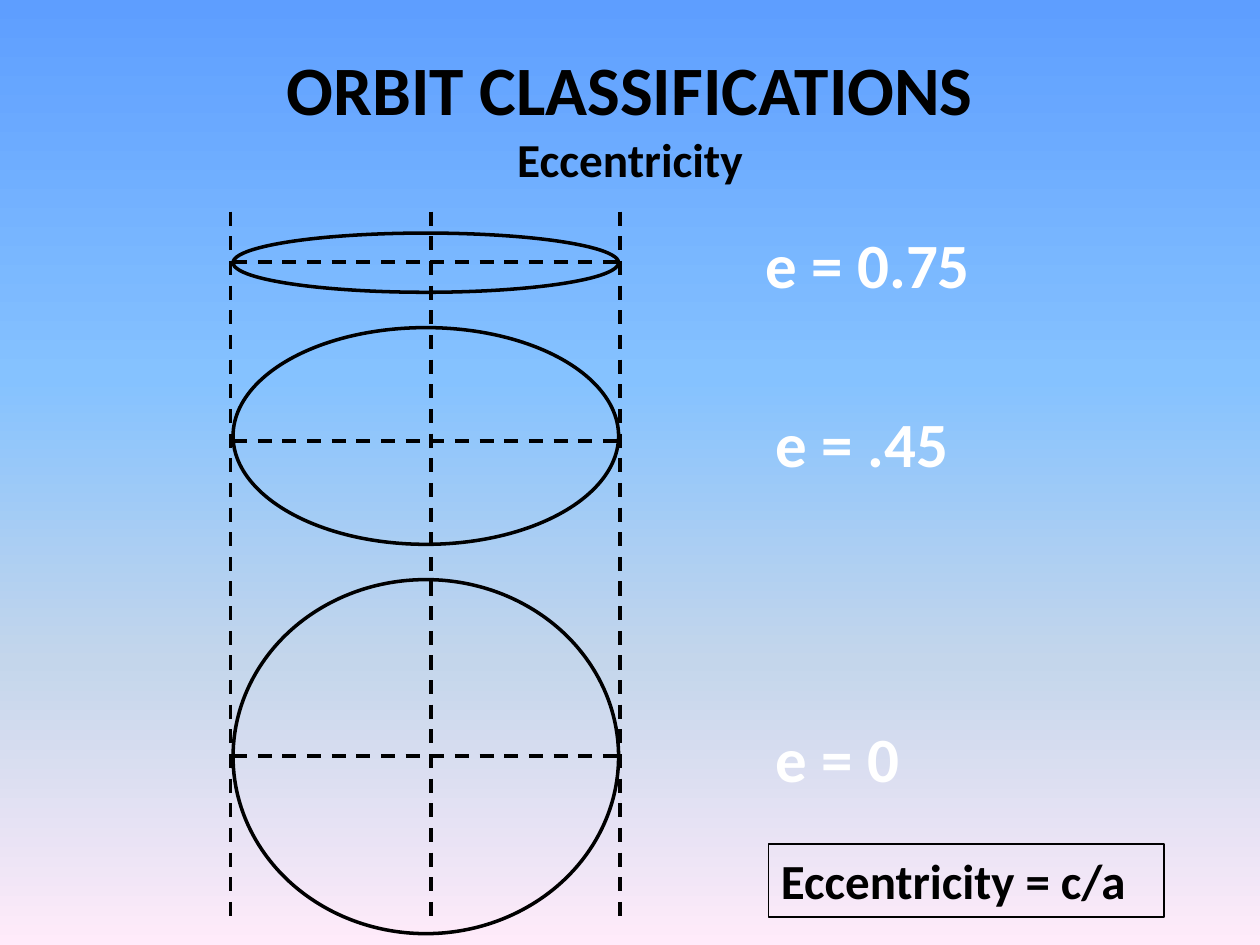
"""Build a slide that compares orbits of three eccentricities."""
from pptx import Presentation
from pptx.dml.color import RGBColor
from pptx.enum.dml import MSO_LINE
from pptx.enum.shapes import MSO_CONNECTOR, MSO_SHAPE
from pptx.enum.text import MSO_ANCHOR, MSO_AUTO_SIZE, PP_ALIGN
from pptx.oxml.xmlchemy import OxmlElement
from pptx.util import Inches, Pt

FONT = "Calibri"
COLORS = {"ink": "000000", "label": "FFFFFF"}
SKY = [(0, "5E9EFF"), (40, "85C2FF"), (70, "C4D6EB"), (100, "FFEBFA")]
HEADING = [("ORBIT CLASSIFICATIONS", 39.6), ("Eccentricity", 27)]
FORMULA = "Eccentricity = c/a"
ORBITS = [
    {"label": "e = 0.75", "top": 1.85, "height": 0.47, "axis": 2.08, "label_box": (5.98, 1.83)},
    {"label": "e = .45", "top": 2.6, "height": 1.72, "axis": 3.5, "label_box": (6.06, 1.58)},
    {"label": "e = 0", "top": 4.6, "height": 2.81, "axis": 6, "label_box": (6.06, 1.2)},
]
ORBIT_LEFT, ORBIT_WIDTH, AXIS_RIGHT = 1.85, 3.06, 4.9
GUIDES, GUIDE_TOP, GUIDE_BOTTOM = (1.83, 3.42, 4.92), 1.68, 7.32
LABEL_HEIGHT, LABEL_RISE = 0.7, 0.34


def rgb(name):
    return RGBColor.from_string(COLORS[name])


def style_font(font, size, color="ink"):
    font.name, font.size, font.bold = FONT, Pt(size), True
    font.color.rgb = rgb(color)


def paint_sky(slide):
    fill = slide.background.fill
    fill.gradient()
    fill.gradient_angle = 270
    stops = slide.element.xpath(".//a:gsLst")[0]
    stops.clear()
    for share, color in SKY:
        stop = OxmlElement("a:gs")
        stop.set("pos", str(share * 1000))
        tint = OxmlElement("a:srgbClr")
        tint.set("val", color)
        stop.append(tint)
        stops.append(stop)


def outline(shape, width):
    shape.line.color.rgb = rgb("ink")
    shape.line.width = Pt(width)


def add_orbit(slide, top, height):
    orbit = slide.shapes.add_shape(
        MSO_SHAPE.OVAL, *map(Inches, (ORBIT_LEFT, top, ORBIT_WIDTH, height)))
    orbit.shadow.inherit = False
    orbit.fill.background()
    outline(orbit, 2)


def add_dashed(slide, *ends):
    dashed = slide.shapes.add_connector(MSO_CONNECTOR.STRAIGHT, *map(Inches, ends))
    outline(dashed, 2)
    dashed.line.dash_style = MSO_LINE.DASH
    dashed._element.spPr.append(OxmlElement("a:effectLst"))


def add_text(slide, text, box, size, color="ink", wrap=True):
    area = slide.shapes.add_textbox(*map(Inches, box))
    frame = area.text_frame
    frame.word_wrap = wrap
    frame.auto_size = MSO_AUTO_SIZE.SHAPE_TO_FIT_TEXT
    frame.text = text
    style_font(frame.paragraphs[0].font, size, color)
    return area


def add_heading(slide):
    frame = slide.shapes.add_textbox(*map(Inches, (0.5, 0.3, 9, 1.25))).text_frame
    frame.word_wrap = True
    frame.vertical_anchor = MSO_ANCHOR.MIDDLE
    paragraph = frame.paragraphs[0]
    paragraph.alignment = PP_ALIGN.CENTER
    for index, (text, size) in enumerate(HEADING):
        if index:
            paragraph.add_line_break()
        run = paragraph.add_run()
        run.text = text
        style_font(run.font, size)


def main():
    deck = Presentation()
    deck.slide_width, deck.slide_height = Inches(10), Inches(7.5)
    slide = deck.slides.add_slide(deck.slide_layouts[6])
    paint_sky(slide)
    add_heading(slide)
    outline(add_text(slide, FORMULA, (6.1, 6.7, 3.14, 0.58), 28), 1)
    for x in GUIDES:
        add_dashed(slide, x, GUIDE_TOP, x, GUIDE_BOTTOM)
    for orbit in ORBITS:
        axis = orbit["axis"]
        add_orbit(slide, orbit["top"], orbit["height"])
        add_dashed(slide, ORBIT_LEFT, axis, AXIS_RIGHT, axis)
        left, width = orbit["label_box"]
        add_text(slide, orbit["label"], (left, axis - LABEL_RISE, width, LABEL_HEIGHT),
                 36, "label", wrap=False)
    deck.save("out.pptx")


if __name__ == "__main__":
    main()
